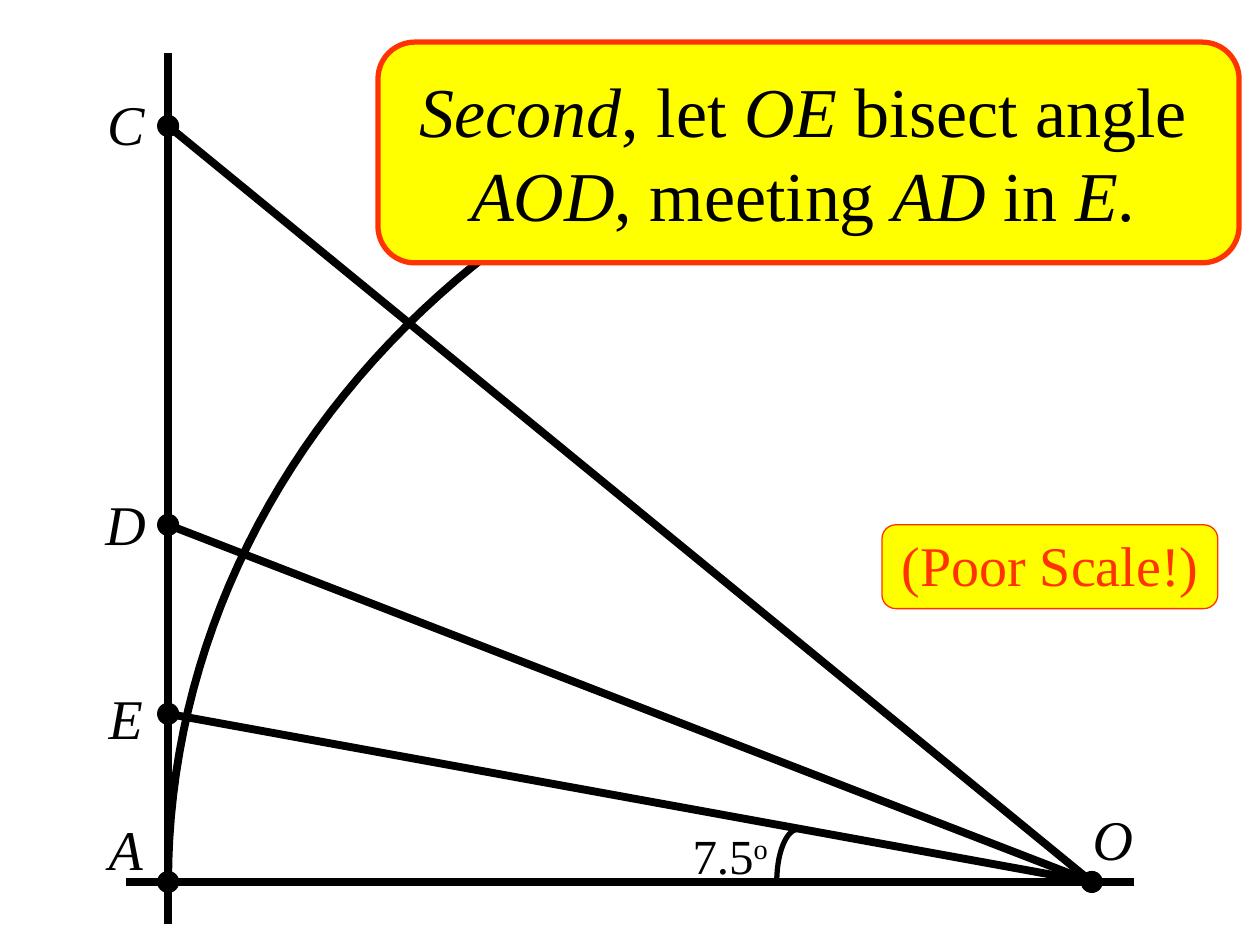
from dataclasses import dataclass
from math import cos, pi, sin

from lxml.etree import SubElement
from pptx import Presentation
from pptx.dml.color import RGBColor
from pptx.enum.shapes import MSO_CONNECTOR, MSO_SHAPE
from pptx.enum.text import PP_ALIGN
from pptx.oxml.ns import qn
from pptx.util import Cm, Pt


@dataclass(frozen=True)
class Theme:
    font: str = "Times New Roman"
    ink: RGBColor = RGBColor(0x00, 0x00, 0x00)
    accent: RGBColor = RGBColor(0xFF, 0x33, 0x00)
    panel: RGBColor = RGBColor(0xFF, 0xFF, 0x00)
    statement_size: float = 40
    label_size: float = 32
    angle_size: float = 28
    thick: float = 4.5
    medium: float = 3
    thin: float = 0.75


THEME = Theme()

# Points of the construction, in centimetres
TANGENT_X, BASE_Y = 3.39, 17.78
POINT_O = (22.01, BASE_Y)
POINT_A = (TANGENT_X, BASE_Y)
POINT_C = (TANGENT_X, 2.54)
POINT_D = (TANGENT_X, 10.58)
POINT_E = (TANGENT_X, 14.39)
DOT_SIZE = 0.42
LABEL_SIZE = (1.69, 1.59)


def add_segment(page, start, end):
    segment = page.shapes.add_connector(
        MSO_CONNECTOR.STRAIGHT, *(Cm(value) for value in (*start, *end)))
    segment.line.color.rgb = THEME.ink
    segment.line.width = Pt(THEME.thick)
    SubElement(segment._element.spPr, qn("a:effectLst"))


def add_quarter_arc(page, center, radius_x, radius_y, width, steps=60):
    """Draw the upper-left quarter of an ellipse, from its left end to its top."""
    angles = [pi / 2 * step / steps for step in range(steps + 1)]
    points = [(Cm(center[0] - radius_x * cos(angle)),
               Cm(center[1] - radius_y * sin(angle))) for angle in angles]
    builder = page.shapes.build_freeform(*points[0])
    builder.add_line_segments(points[1:], close=False)
    arc = builder.convert_to_shape()
    arc.shadow.inherit = False
    arc.fill.background()
    arc.line.color.rgb = THEME.ink
    arc.line.width = Pt(width)


def add_filled_shape(page, kind, frame, fill, line, width):
    shape = page.shapes.add_shape(kind, *(Cm(value) for value in frame))
    shape.shadow.inherit = False
    shape.fill.solid()
    shape.fill.fore_color.rgb = fill
    shape.line.color.rgb = line
    shape.line.width = Pt(width)


def add_dot(page, point):
    left, top = (value - DOT_SIZE / 2 for value in point)
    add_filled_shape(page, MSO_SHAPE.OVAL, (left, top, DOT_SIZE, DOT_SIZE),
                     THEME.ink, THEME.ink, THEME.thin)


def add_panel(page, frame, width):
    add_filled_shape(page, MSO_SHAPE.ROUNDED_RECTANGLE, frame,
                     THEME.panel, THEME.accent, width)


def add_text(page, frame, pieces, size, color=THEME.ink):
    """Add a centred box; each piece is its text and whether it is italic."""
    box = page.shapes.add_textbox(*(Cm(value) for value in frame))
    box.text_frame.word_wrap = True
    para = box.text_frame.paragraphs[0]
    para.alignment = PP_ALIGN.CENTER
    for text, italic in pieces:
        span = para.add_run()
        span.text = text
        span.font.name = THEME.font
        span.font.size = Pt(size)
        span.font.italic = italic
        span.font.color.rgb = color
    return para


def main():
    deck = Presentation()
    deck.slide_width, deck.slide_height = Cm(25.4), Cm(19.05)
    page = deck.slides.add_slide(deck.slide_layouts[6])

    # Circle about O, base line and tangent
    add_quarter_arc(page, POINT_O, 18.62, 16.72, THEME.thick)
    add_segment(page, (2.54, BASE_Y), (22.86, BASE_Y))
    add_segment(page, (TANGENT_X, 18.63), (TANGENT_X, 1.06))

    # Rays from O, and the marked points
    for point in (POINT_C, POINT_D, POINT_E):
        add_segment(page, POINT_O, point)
    for point in (POINT_O, POINT_A, POINT_C, POINT_D, POINT_E):
        add_dot(page, point)

    # Point names
    labels = {"O": (21.59, 16.09), "C": (1.69, 1.69), "D": (1.69, 9.74),
              "E": (1.69, 13.65), "A": (1.69, 16.3)}
    for name, position in labels.items():
        add_text(page, (*position, *LABEL_SIZE), [(name, True)],
                 THEME.label_size)

    # Bisected angle
    angle = add_text(page, (13.55, 16.51, 2.34, 1.46),
                     [("7.5", False), ("o", False)], THEME.angle_size)
    angle.runs[1]._r.get_or_add_rPr().set("baseline", "30000")
    add_quarter_arc(page, (16.09, BASE_Y), 0.43, 1.06, THEME.medium)

    # Statement of the step
    add_panel(page, (7.62, 0.85, 17.36, 4.45), THEME.medium)
    add_text(page, (7.41, 1.23, 17.57, 3.62),
             [("Second", True), (", let ", False), ("OE", True),
              (" bisect angle ", False), ("AOD", True),
              (", meeting ", False), ("AD", True), (" in ", False),
              ("E", True), (".", False)], THEME.statement_size)

    # Scale remark
    add_panel(page, (17.78, 10.58, 6.77, 1.69), THEME.thin)
    add_text(page, (17.36, 10.58, 7.62, 1.59), [("(Poor Scale!)", False)],
             THEME.label_size, THEME.accent)

    deck.save("out.pptx")


if __name__ == "__main__":
    main()
